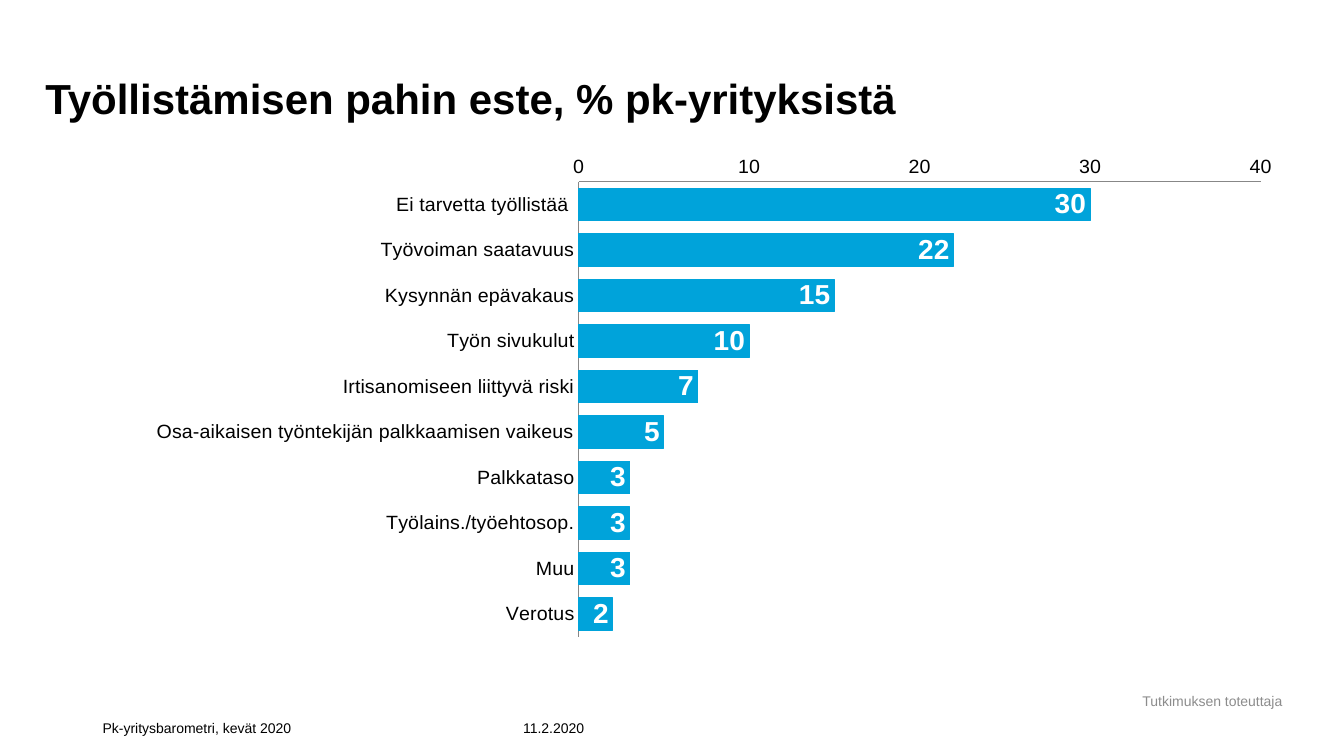
"""Build the slide on the worst obstacles to hiring in small businesses."""
from dataclasses import dataclass

from lxml import etree
from pptx import Presentation
from pptx import util as u
from pptx.chart import data as cd
from pptx.dml.color import RGBColor
from pptx.enum import chart as ch, text
from pptx.oxml import ns

EMU_PER_PX = 9144


@dataclass(frozen=True)
class Theme:
    font: str = "Arial"
    ink: str = "000000"
    muted: str = "8C8C8C"
    bar: str = "00A3DA"
    paper: str = "FFFFFF"
    axis: str = "878787"
    title_pt: int = 30
    value_pt: int = 20
    axis_pt: int = 14
    small_pt: int = 10


@dataclass(frozen=True)
class Label:
    content: str
    box: tuple[int, int, int, int]
    size: int
    color: str
    bold: bool = False
    inset: bool = True
    anchor: text.MSO_ANCHOR = text.MSO_ANCHOR.BOTTOM
    align: text.PP_ALIGN = text.PP_ALIGN.LEFT


T = Theme()

LABELS = [
    Label("Tutkimuksen toteuttaja", (1116, 682, 173, 26), T.small_pt, T.muted,
          anchor=text.MSO_ANCHOR.MIDDLE, align=text.PP_ALIGN.CENTER),
    Label("11.2.2020", (509, 700, 87, 35), T.small_pt, T.ink),
    Label("Pk-yritysbarometri, kevät 2020", (92, 700, 417, 35), T.small_pt, T.ink),
    Label("Työllistämisen pahin este, % pk-yrityksistä", (45, 0, 1230, 122),
          T.title_pt, T.ink, bold=True, inset=False),
]

OBSTACLES = {
    "Ei tarvetta työllistää ": 30,
    "Työvoiman saatavuus": 22,
    "Kysynnän epävakaus": 15,
    "Työn sivukulut": 10,
    "Irtisanomiseen liittyvä riski": 7,
    "Osa-aikaisen työntekijän palkkaamisen vaikeus": 5,
    "Palkkataso": 3,
    "Työlains./työehtosop.": 3,
    "Muu": 3,
    "Verotus": 2,
}
CHART_BOX = (45, 155, 1230, 512)
PLOT_LAYOUT = {"x": 0.43, "y": 0.03, "w": 0.55, "h": 0.9}


def px(n: int) -> u.Emu:
    return u.Emu(n * EMU_PER_PX)


def rgb(color: str) -> RGBColor:
    return RGBColor.from_string(color)


def style_font(font, size: int, color: str, bold: bool = False) -> None:
    font.name = T.font
    font.size = u.Pt(size)
    font.bold = bold
    font.color.rgb = rgb(color)


def add_label(s, label: Label) -> None:
    sp = s.shapes.add_textbox(*map(px, label.box))
    tf = sp.text_frame
    tf.word_wrap = True
    tf.vertical_anchor = label.anchor
    if not label.inset:
        tf.margin_left = tf.margin_right = tf.margin_top = tf.margin_bottom = 0
    tf.text = label.content
    p = tf.paragraphs[0]
    p.alignment = label.align
    style_font(p.runs[0].font, label.size, label.color, label.bold)


def style_axis(axis) -> None:
    axis.has_major_gridlines = False
    axis.major_tick_mark = axis.minor_tick_mark = ch.XL_TICK_MARK.NONE
    style_font(axis.tick_labels.font, T.axis_pt, T.ink)
    axis.format.line.color.rgb = rgb(T.axis)
    axis.format.line.width = u.Pt(0.75)


def set_plot_area(chart) -> None:
    area = chart._chartSpace.find(".//" + ns.qn("c:plotArea"))
    for old in area.findall(ns.qn("c:layout")):
        area.remove(old)
    layout = etree.Element(ns.qn("c:layout"))
    manual = etree.SubElement(layout, ns.qn("c:manualLayout"))
    settings = {"layoutTarget": "inner", "xMode": "edge", "yMode": "edge", **PLOT_LAYOUT}
    for tag, val in settings.items():
        etree.SubElement(manual, ns.qn(f"c:{tag}")).set("val", str(val))
    area.insert(0, layout)
    sppr = etree.SubElement(area, ns.qn("c:spPr"))
    fill = etree.SubElement(sppr, ns.qn("a:solidFill"))
    etree.SubElement(fill, ns.qn("a:srgbClr")).set("val", T.paper)


def add_obstacle_chart(s) -> None:
    data = cd.CategoryChartData()
    data.categories = list(OBSTACLES)
    data.add_series("Series 1", list(OBSTACLES.values()))
    chart = s.shapes.add_chart(
        ch.XL_CHART_TYPE.BAR_CLUSTERED, *map(px, CHART_BOX), data).chart
    chart.has_title = chart.has_legend = False
    style_font(chart.font, T.small_pt, T.ink)

    cats, vals = chart.category_axis, chart.value_axis
    style_axis(cats)
    style_axis(vals)
    cats.reverse_order = True
    cats.crosses = ch.XL_AXIS_CROSSES.MAXIMUM
    vals.minimum_scale, vals.maximum_scale, vals.major_unit = 0, 40, 10

    plot = chart.plots[0]
    plot.gap_width = 40
    plot.vary_by_categories = False
    series = plot.series[0]
    series.format.fill.solid()
    series.format.fill.fore_color.rgb = rgb(T.bar)
    series.format.line.color.rgb = rgb(T.bar)
    series.format.line.width = u.Pt(0.75)
    labels = series.data_labels
    labels.show_value = True
    labels.position = ch.XL_LABEL_POSITION.INSIDE_END
    style_font(labels.font, T.value_pt, T.paper, bold=True)
    set_plot_area(chart)


def main() -> None:
    prs = Presentation()
    prs.slide_width, prs.slide_height = px(1333), px(750)
    s = prs.slides.add_slide(prs.slide_layouts[6])
    for label in LABELS:
        add_label(s, label)
    add_obstacle_chart(s)
    prs.save("out.pptx")


if __name__ == "__main__":
    main()
